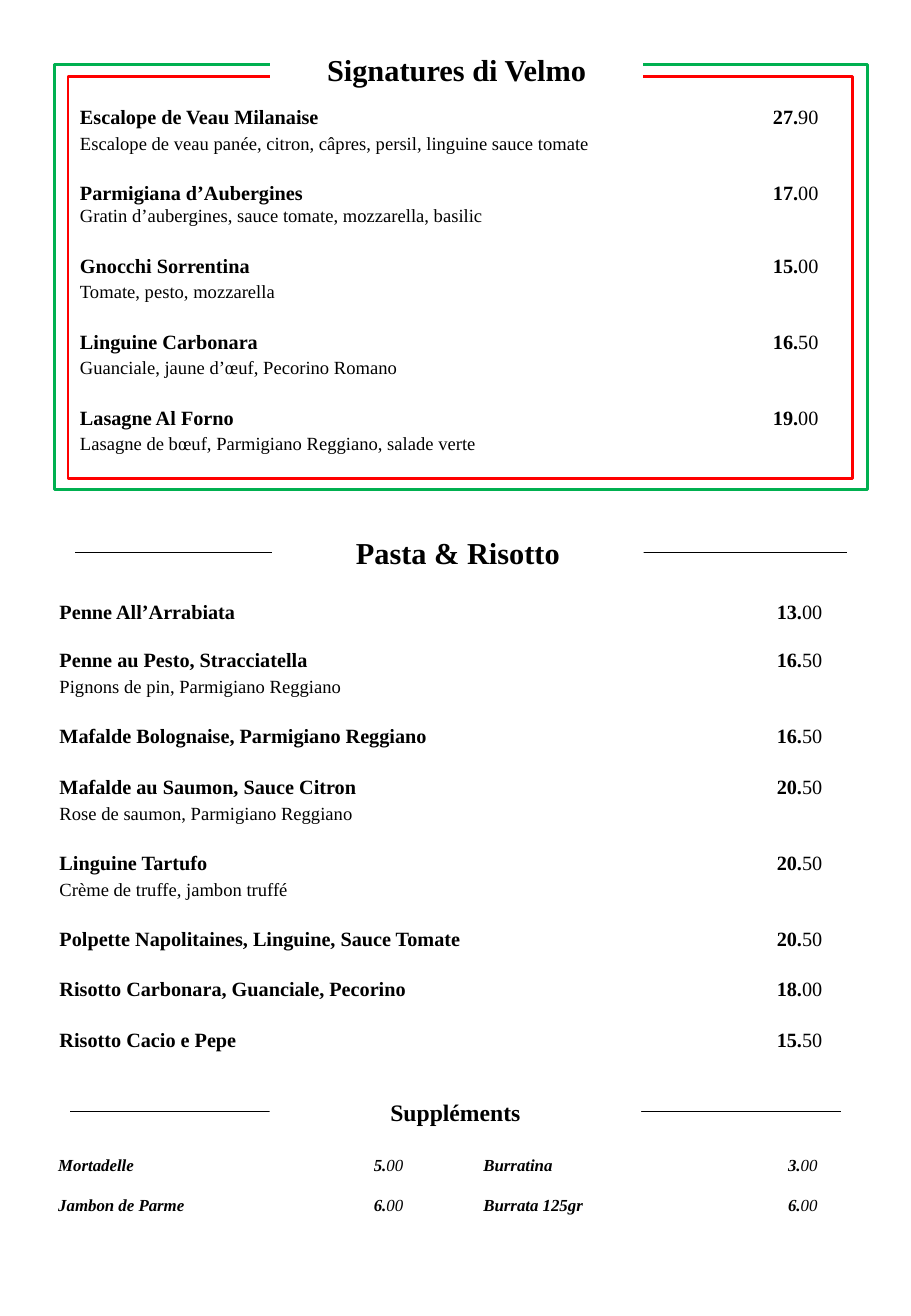
from dataclasses import dataclass

from lxml.etree import SubElement as Sub
from pptx import Presentation as Deck
from pptx.dml.color import RGBColor as Color
from pptx.enum.shapes import MSO_CONNECTOR as Link, MSO_SHAPE as Form
from pptx.enum.text import MSO_ANCHOR as Anchor, PP_ALIGN as Align
from pptx.oxml.ns import qn
from pptx.util import Inches, Pt


@dataclass(frozen=True)
class Theme:
    font: str = "Times New Roman"
    ink: str = "000000"
    paper: str = "FFFFFF"
    red: str = "FF0000"
    green: str = "00B050"
    head: int = 18
    minor: int = 14
    dish: int = 12
    note: int = 11
    extra: int = 10
    lead: int = 15


@dataclass(frozen=True)
class Dish:
    name: str
    price: str
    note: str = ""
    gap: float = 15
    tight: bool = False


class Menu:
    def __init__(self, slide, theme):
        self.slide = slide
        self.theme = theme

    def run(self, par, text, size, bold=False, slant=False):
        run = par.add_run()
        run.text = text
        font = run.font
        font.name, font.size = self.theme.font, Pt(size)
        font.bold, font.italic = bold, slant
        font.color.rgb = Color.from_string(self.theme.ink)

    def box(self, area, fill=None, line=None, width=1.5):
        box = self.slide.shapes.add_shape(Form.RECTANGLE, *map(Inches, area))
        box.shadow.inherit = False
        if fill:
            box.fill.solid()
            box.fill.fore_color.rgb = Color.from_string(fill)
        else:
            box.fill.background()
        if line:
            box.line.color.rgb = Color.from_string(line)
            box.line.width = Pt(width)
        else:
            box.line.fill.background()
        return box

    def rule(self, left, right, top):
        rule = self.slide.shapes.add_connector(
            Link.STRAIGHT, *map(Inches, (left, top, right, top)))
        rule.line.color.rgb = Color.from_string(self.theme.ink)
        rule.line.width = Pt(0.5)
        Sub(rule._element.spPr, qn("a:effectLst"))

    def inset(self, frame, side, top):
        frame.margin_left = frame.margin_right = Inches(side)
        frame.margin_top = frame.margin_bottom = Inches(top)
        frame.word_wrap = True

    def title(self, text, area, size, line=None):
        frame = self.box(area, self.theme.paper, line, 0.75).text_frame
        self.inset(frame, 0, 0)
        frame.vertical_anchor = Anchor.MIDDLE
        par = frame.paragraphs[0]
        par.alignment = Align.CENTER
        self.run(par, text, size, bold=True)

    def tab(self, par, place):
        tabs = Sub(par._p.get_or_add_pPr(), qn("a:tabLst"))
        Sub(tabs, qn("a:tab"), pos=str(Inches(place)), algn="r")

    def dishes(self, area, items, tab, size, lead=None, slant=False, pad=(0, 0)):
        frame = self.slide.shapes.add_textbox(*map(Inches, area)).text_frame
        self.inset(frame, *pad)
        for spot, item in enumerate(items):
            par = frame.add_paragraph() if spot else frame.paragraphs[0]
            if lead:
                par.line_spacing = Pt(lead)
            if spot:
                par.space_before = Pt(item.gap)
            self.tab(par, tab)
            whole, cents = item.price.split(".")
            self.run(par, f"{item.name}\t{whole}.", size, True, slant)
            self.run(par, cents, size, False, slant)
            if item.note:
                par = frame.add_paragraph()
                if lead and not item.tight:
                    par.line_spacing = Pt(lead)
                self.run(par, item.note, self.theme.note)


HOUSE = [
    Dish("Escalope de Veau Milanaise", "27.90",
         "Escalope de veau panée, citron, câpres, persil, linguine sauce tomate"),
    Dish("Parmigiana d’Aubergines", "17.00",
         "Gratin d’aubergines, sauce tomate, mozzarella, basilic", tight=True),
    Dish("Gnocchi Sorrentina", "15.00", "Tomate, pesto, mozzarella"),
    Dish("Linguine Carbonara", "16.50", "Guanciale, jaune d’œuf, Pecorino Romano"),
    Dish("Lasagne Al Forno", "19.00",
         "Lasagne de bœuf, Parmigiano Reggiano, salade verte"),
]
PASTA = [
    Dish("Penne All’Arrabiata", "13.00"),
    Dish("Penne au Pesto, Stracciatella", "16.50",
         "Pignons de pin, Parmigiano Reggiano", gap=14),
    Dish("Mafalde Bolognaise, Parmigiano Reggiano", "16.50"),
    Dish("Mafalde au Saumon, Sauce Citron", "20.50",
         "Rose de saumon, Parmigiano Reggiano"),
    Dish("Linguine Tartufo", "20.50", "Crème de truffe, jambon truffé"),
    Dish("Polpette Napolitaines, Linguine, Sauce Tomate", "20.50"),
    Dish("Risotto Carbonara, Guanciale, Pecorino", "18.00"),
    Dish("Risotto Cacio e Pepe", "15.50"),
]
EXTRAS = [
    (0.48, 2.84, [Dish("Mortadelle", "5.00"),
                  Dish("Jambon de Parme", "6.00", gap=12)]),
    (3.98, 2.75, [Dish("Burratina", "3.00"),
                  Dish("Burrata 125gr", "6.00", gap=12)]),
]


def main():
    deck = Deck()
    deck.slide_width, deck.slide_height = Inches(7.5), Inches(10.83)
    theme = Theme()
    menu = Menu(deck.slides.add_slide(deck.slide_layouts[6]), theme)

    # Pasta and risotto
    menu.rule(0.62, 6.97, 4.55)
    menu.title("Pasta & Risotto", (2.24, 4.4, 3.06, 0.3), theme.head)
    menu.dishes((0.49, 4.92, 6.66, 3.77), PASTA, 6.28, theme.dish, theme.lead)

    # House dishes in a double frame
    menu.box((0.56, 0.63, 6.46, 3.31), line=theme.red)
    menu.box((0.45, 0.53, 6.69, 3.5), line=theme.green)
    menu.dishes((0.56, 0.8, 6.48, 3.02), HOUSE, 6.08, theme.dish, theme.lead,
                pad=(0.1, 0.05))
    menu.title("Signatures di Velmo", (2.23, 0.42, 3.06, 0.3), theme.head,
               theme.paper)

    # Extras in two columns
    menu.rule(0.58, 6.92, 9.15)
    menu.title("Suppléments", (2.22, 9.03, 3.06, 0.24), theme.minor)
    for left, tab, items in EXTRAS:
        menu.dishes((left, 9.5, 3.16, 0.5), items, tab, theme.extra, slant=True)

    deck.save("out.pptx")


if __name__ == "__main__":
    main()
